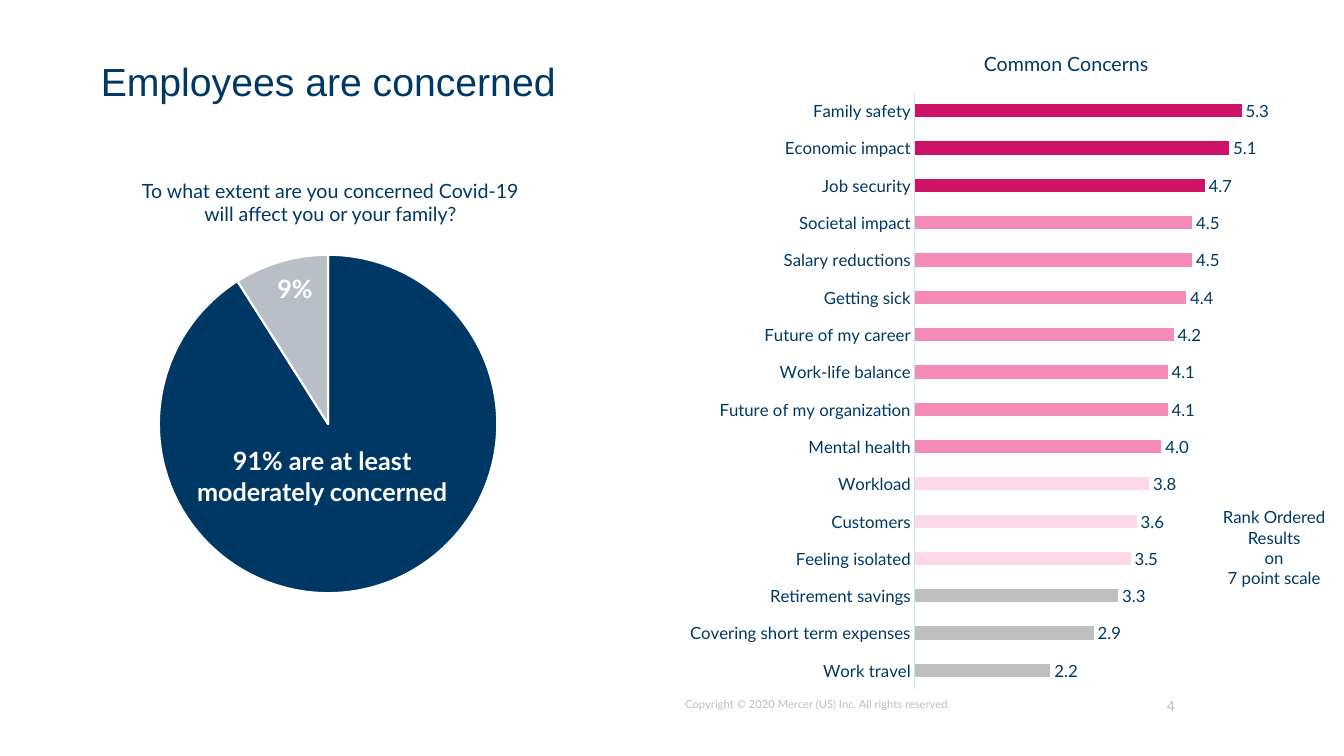
from lxml import etree
from pptx import Presentation
from pptx.chart.data import CategoryChartData
from pptx.dml.color import RGBColor
from pptx.enum.chart import XL_CHART_TYPE, XL_LABEL_POSITION, XL_TICK_LABEL_POSITION, XL_TICK_MARK
from pptx.enum.text import PP_ALIGN
from pptx.oxml.ns import qn
from pptx.util import Cm, Pt

LEFT, CENTER = PP_ALIGN.LEFT, PP_ALIGN.CENTER
PIE, BAR = XL_CHART_TYPE.PIE, XL_CHART_TYPE.BAR_CLUSTERED
OUTSIDE_END = XL_LABEL_POSITION.OUTSIDE_END
NEXT_TO_AXIS = XL_TICK_LABEL_POSITION.NEXT_TO_AXIS
NO_TICK = XL_TICK_MARK.NONE

NAVY, GREY, WHITE = "003865", "B9BFC7", "FFFFFF"
AXIS_BLUE, BAR_GREY = "C2E4FF", "BFBFBF"
MAGENTA, PINK, PALE_PINK = "CE1265", "F58BB9", "FCD8E8"

# Lowest ranked first, as a bar chart fills from the bottom
CONCERNS = [
    ("Work travel", 2.2, BAR_GREY),
    ("Covering short term expenses", 2.9, BAR_GREY),
    ("Retirement savings", 3.3, BAR_GREY),
    ("Feeling isolated", 3.5, PALE_PINK),
    ("Customers", 3.6, PALE_PINK),
    ("Workload", 3.8, PALE_PINK),
    ("Mental health", 4.0, PINK),
    ("Future of my organization", 4.1, PINK),
    ("Work-life balance", 4.1, PINK),
    ("Future of my career", 4.2, PINK),
    ("Getting sick", 4.4, PINK),
    ("Salary reductions", 4.5, PINK),
    ("Societal impact", 4.5, PINK),
    ("Job security", 4.7, MAGENTA),
    ("Economic impact", 5.1, MAGENTA),
    ("Family safety", 5.3, MAGENTA),
]


def rgb(value):
    return RGBColor.from_string(value)


class SlideBuilder:
    font = "Lato"

    def __init__(self, prs):
        self.s = prs.slides.add_slide(prs.slide_layouts[6])

    def style(self, font, size, color=NAVY, name=None, bold=False):
        formats = {"size": Pt(size), "name": name or self.font, "bold": bold}
        for key, value in formats.items():
            setattr(font, key, value)
        font.color.rgb = rgb(color)

    def text(self, box, lines, size, align=LEFT, spacing=None, **look):
        tf = self.s.shapes.add_textbox(*map(Cm, box)).text_frame
        frame = {"margin_left": 0, "margin_right": 0, "margin_top": 0,
                 "margin_bottom": 0, "word_wrap": True}
        for key, value in frame.items():
            setattr(tf, key, value)
        tf.text = lines
        for p in tf.paragraphs:
            p.alignment = align
            p.line_spacing = spacing
            for r in p.runs:
                self.style(r.font, size, **look)

    def chart(self, kind, box, categories, values, colors, layout):
        data = CategoryChartData(number_format="0.0")
        data.categories = categories
        data.add_series("Series 1", values)
        chart = self.s.shapes.add_chart(kind, *map(Cm, box), data).chart
        chart.has_legend = chart.has_title = False
        self.style(chart.font, 10)
        plot = chart.plots[0]
        plot.vary_by_categories = kind == PIE
        for i, color in enumerate(colors):
            fill = plot.series[0].points[i].format.fill
            fill.solid()
            fill.fore_color.rgb = rgb(color)
        self.place_plot(chart, layout)
        return chart

    def place_plot(self, chart, layout):
        """Fix the inner plot area as fractions (x, y, w, h) of the chart."""
        area = chart.element.find(".//" + qn("c:plotArea"))
        for old in area.findall(qn("c:layout")):
            area.remove(old)
        outer = etree.Element(qn("c:layout"))
        area.insert(0, outer)
        manual = etree.SubElement(outer, qn("c:manualLayout"))
        settings = [("layoutTarget", "inner"), ("xMode", "edge"), ("yMode", "edge")]
        for tag, value in settings + list(zip("xywh", layout)):
            etree.SubElement(manual, qn("c:" + tag)).set("val", str(value))

    def pie(self, box, values, colors, layout):
        categories = [str(i + 1) for i in range(len(values))]
        chart = self.chart(PIE, box, categories, values, colors, layout)
        for i in range(len(values)):
            line = chart.plots[0].series[0].points[i].format.line
            line.color.rgb = rgb(WHITE)
            line.width = Pt(1.5)

    def bars(self, box, rows, layout):
        categories, values, colors = zip(*rows)
        chart = self.chart(BAR, box, categories, values, colors, layout)
        plot = chart.plots[0]
        plot.gap_width = 182
        plot.has_data_labels = True
        labels = plot.data_labels
        formats = {"show_value": True, "number_format": "0.0",
                   "number_format_is_linked": False, "position": OUTSIDE_END}
        for key, value in formats.items():
            setattr(labels, key, value)
        self.style(labels.font, 12)

        axis = chart.category_axis
        axis.major_tick_mark = axis.minor_tick_mark = NO_TICK
        axis.tick_label_position = NEXT_TO_AXIS
        axis.has_major_gridlines = False
        axis.format.line.color.rgb = rgb(AXIS_BLUE)
        axis.format.line.width = Pt(0.75)
        self.style(axis.tick_labels.font, 12)

        scale = {"minimum_scale": 0, "maximum_scale": 6, "major_tick_mark": NO_TICK,
                 "has_major_gridlines": False, "visible": False}
        for key, value in scale.items():
            setattr(chart.value_axis, key, value)


def main():
    prs = Presentation()
    prs.slide_width, prs.slide_height = Cm(33.87), Cm(19.05)
    b = SlideBuilder(prs)

    b.text((17.27, 17.58, 11.63, 0.76),
           "Copyright © 2020 Mercer (US) Inc. All rights reserved.", 8, color=GREY)
    b.text((2.54, 1.57, 28.09, 2.64), "Employees are concerned", 28,
           spacing=0.9, name="Arial")

    b.pie((0.74, 6.05, 15.06, 9.27), (91, 9), (NAVY, GREY), (0.21, 0.04, 0.58, 0.92))
    b.text((2.33, 4.5, 12, 2.54),
           "To what extent are you concerned Covid-19\nwill affect you or your family?",
           14, CENTER)
    b.text((4.12, 11.23, 8, 2.54), "91% are at least\nmoderately concerned",
           18, CENTER, color=WHITE, bold=True)
    b.text((6.99, 6.88, 1.27, 1.65), "9%", 18, color=WHITE, bold=True)

    b.bars((17.15, 2.01, 15.54, 15.67), CONCERNS, (0.38, 0.02, 0.6, 0.96))
    b.text((23.87, 1.32, 6, 2.54), "Common Concerns", 14, CENTER)
    b.text((29.41, 17.58, 1.9, 0.76), "4", 10, color=GREY)
    b.text((30.36, 12.78, 3.5, 2.54), "Rank Ordered\nResults\non\n7 point scale", 12, CENTER)

    prs.save("out.pptx")


if __name__ == "__main__":
    main()
